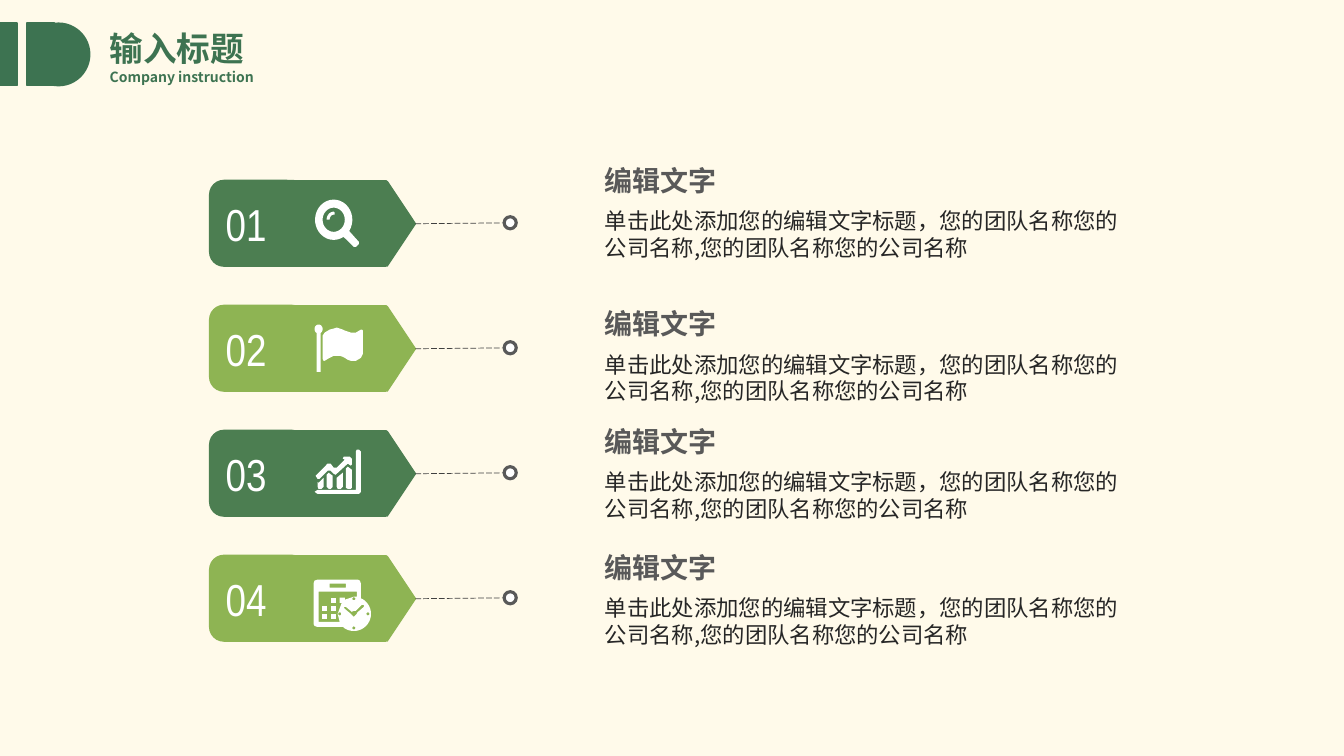
from math import cos, radians, sin

from lxml import etree
from pptx import Presentation
from pptx import util as u
from pptx.dml import color
from pptx.enum import dml, shapes, text
from pptx.oxml import ns

SCALE = 9144
KIND = shapes.MSO_SHAPE
SANS = "Noto Sans CJK SC"
GREEN, LIME, DEEP, WHITE = "4C7E51", "8EB453", "3D7351", "FFFFFF"
BODY = "单击此处添加您的编辑文字标题，您的团队名称您的公司名称,您的团队名称您的公司名称"


def px(n):
    """Turn px into EMU."""
    return u.Emu(round(n * SCALE))


def rgb(code):
    """Turn a hex string into a colour."""
    return color.RGBColor.from_string(code)


def form(at, kind, box, fill, line=None, wide=1):
    """Draw a filled preset shape."""
    part = at.add_shape(kind, *map(px, box))
    part.shadow.inherit = False
    part.fill.solid()
    part.fill.fore_color.rgb = rgb(fill)
    part.line.color.rgb = rgb(line or fill)
    part.line.width = u.Pt(wide)
    return part


def write(at, box, words, size, tint, bold=False, face=SANS, wrap=False, pitch=None):
    """Write one run in a text box."""
    part = at.add_textbox(*map(px, box))
    frame = part.text_frame
    frame.word_wrap = wrap
    frame.auto_size = text.MSO_AUTO_SIZE.SHAPE_TO_FIT_TEXT
    para = frame.paragraphs[0]
    if pitch:
        para.line_spacing = pitch
    run = para.add_run()
    run.text = words
    font = run.font
    font.size, font.bold, font.name = u.Pt(size), bold, face
    font.color.rgb = rgb(tint)
    etree.SubElement(run._r.rPr, ns.qn("a:ea")).set("typeface", face)


def arc(x, y, wide, high, start=0, end=360):
    """List points along an oval."""
    turns = [radians(start + (end - start) * i / 32) for i in range(33)]
    return [(x + wide * cos(t), y + high * sin(t)) for t in turns]


def rect(x, y, wide, high):
    """List the corners of a rectangle."""
    return [(x, y), (x + wide, y), (x + wide, y + high), (x, y + high)]


def trace(at, x, y, rings):
    """Draw closed outlines as one white shape."""
    rings = [[(px(x + a), px(y + b)) for a, b in ring] for ring in rings]
    pen = at.build_freeform(*rings[0][0])
    for i, ring in enumerate(rings):
        if i:
            pen.move_to(*ring[0])
        pen.add_line_segments(ring[1:], close=True)
    part = pen.convert_to_shape()
    part.shadow.inherit = False
    part.fill.solid()
    part.fill.fore_color.rgb = rgb(WHITE)
    part.line.fill.background()


LENS = [[
    arc(19, 20, 18.5, 20, 58, 394) + [(44, 42), (44, 44), (41, 47), (39, 47)],
    arc(19, 20, 11, 12),
    arc(19, 20, 7, 8, 180, 270) + [(20, 13), (20, 15)] + arc(19, 20, 4, 5, 270, 180),
]]
FLAG = [[
    arc(4, 4.5, 4, 4.5, 120, 420) + [(6, 47), (2, 47)],
    [(8, 11), (10, 8), (15, 5), (19, 4), (22, 3), (25, 4), (28, 5), (30, 6),
     (33, 7), (36, 8), (41, 8), (46, 5), (47, 5), (48, 6), (48, 29), (47, 31),
     (46, 33), (41, 36), (36, 36), (33, 35), (30, 33), (28, 32), (25, 31),
     (22, 31), (19, 31), (15, 33), (10, 36), (9, 36), (8, 34)],
]]
TREND = [
    [[(3, 37), (4, 39), (7, 39), (9, 37), (9, 28), (4, 33), (3, 32)]],
    [[(12, 37), (14, 39), (16, 39), (18, 37), (18, 26), (14, 23), (12, 25)]],
    [[(22, 37), (23, 39), (26, 39), (28, 37), (28, 23), (22, 28)]],
    [[(31, 38), (33, 39), (36, 39), (37, 38), (37, 20), (33, 17), (31, 19)]],
    [[(13, 21), (16, 21), (19, 24), (21, 25), (22, 24), (33, 14), (36, 16),
      (37, 15), (37, 9), (35, 7), (29, 7), (28, 9), (30, 10), (22, 18),
      (19, 18), (16, 14), (13, 14), (2, 25), (1, 26), (3, 29), (5, 29)]],
    [[(44, 0), (42, 0), (41, 2), (41, 40), (3, 40), (0, 42), (3, 44),
      (44, 44), (46, 42), (46, 2)]],
]
DATES = [[rect(x, y, 5, 5)] for x, y in
         [(7, 31), (7, 39), (16, 23), (16, 31), (16, 39)]]
DATES.append([
    [(46, 24), (46, 9), (45, 6), (43, 5), (3, 5), (0, 6), (-1, 9), (-1, 49),
     (0, 51), (3, 52), (29, 52)] + arc(39, 39, 17, 17, 128, -64),
    rect(15, 9, 16, 4),
    [(4, 17), (42, 17), (42, 22), (39, 22), (30, 25), (30, 23), (25, 23),
     (25, 28), (27, 28), (23, 39), (25, 47), (4, 47)],
    [(49, 32), (42, 38), (42, 39), (39, 42), (36, 39), (30, 34), (29, 32),
     (31, 32), (37, 37), (39, 36), (41, 36), (47, 30), (49, 30)],
    *[arc(x, y, 1.5, 1.5) for x, y in [(39, 24), (25, 39), (39, 53), (53, 39)]],
])


def head(at, x, y):
    """Place the page mark and the titles."""
    form(at, KIND.RECTANGLE, (x, y, 17, 62), DEEP)
    mark = at.add_group_shape().shapes
    form(mark, KIND.RECTANGLE, (x + 27, y, 27, 62), DEEP)
    form(mark, KIND.OVAL, (x + 27, y, 62, 62), DEEP)
    write(at, (x + 99, y, 153, 50), "输入标题", 24, DEEP, True)
    write(at, (x + 99, y + 40, 167, 27), "Company instruction", 10, DEEP, True)


def tag(at, x, y, label, tint, icon):
    """Place a numbered arrow tag with its icon and leader."""
    form(at, KIND.ROUNDED_RECTANGLE, (x, y, 96, 85), tint)
    form(at, KIND.RECTANGLE, (x + 77, y, 98, 85), tint)
    form(at, KIND.ISOSCELES_TRIANGLE, (x + 148, y + 29, 84, 28), tint).rotation = 90
    write(at, (x + 6, y + 11, 71, 63), label, 32, WHITE, face="Arial Narrow", wrap=True)
    home = at if len(icon) == 1 else at.add_group_shape().shapes
    for rings in icon:
        trace(home, x + 104, y + 19, rings)
    ends = (x + 204, y + 43, x + 303, y + 42)
    lead = at.add_connector(shapes.MSO_CONNECTOR.STRAIGHT, *map(px, ends))
    lead.line.color.rgb = rgb("404040")
    lead.line.width = u.Pt(0.5)
    lead.line.dash_style = dml.MSO_LINE.LONG_DASH
    etree.SubElement(lead._element.spPr, ns.qn("a:effectLst"))
    form(at, KIND.OVAL, (x + 292, y + 36, 12, 12), WHITE, "595959", 2.25)


def note(at, x, y):
    """Place a heading and its body text."""
    write(at, (x, y, 131, 43), "编辑文字", 20, "595959", True)
    write(at, (x, y + 44, 545, 63), BODY, 16, "262626", wrap=True)


def main():
    """Build the slide."""
    deck = Presentation()
    deck.slide_width, deck.slide_height = u.Inches(13.33), u.Inches(7.5)
    slide = deck.slides.add_slide(deck.slide_layouts[6])
    slide.background.fill.solid()
    slide.background.fill.fore_color.rgb = rgb("FFFAEA")
    at = slide.shapes
    rows = zip((157, 299, 416, 541), (LENS, FLAG, TREND, DATES))
    for i, (top, icon) in enumerate(rows):
        tag(at, 208, 179 + 124 * i, f"{i + 1:02}", (GREEN, LIME)[i % 2], icon)
        note(at, 590, top)
    head(at, 0, 23)
    deck.save("out.pptx")


if __name__ == "__main__":
    main()
